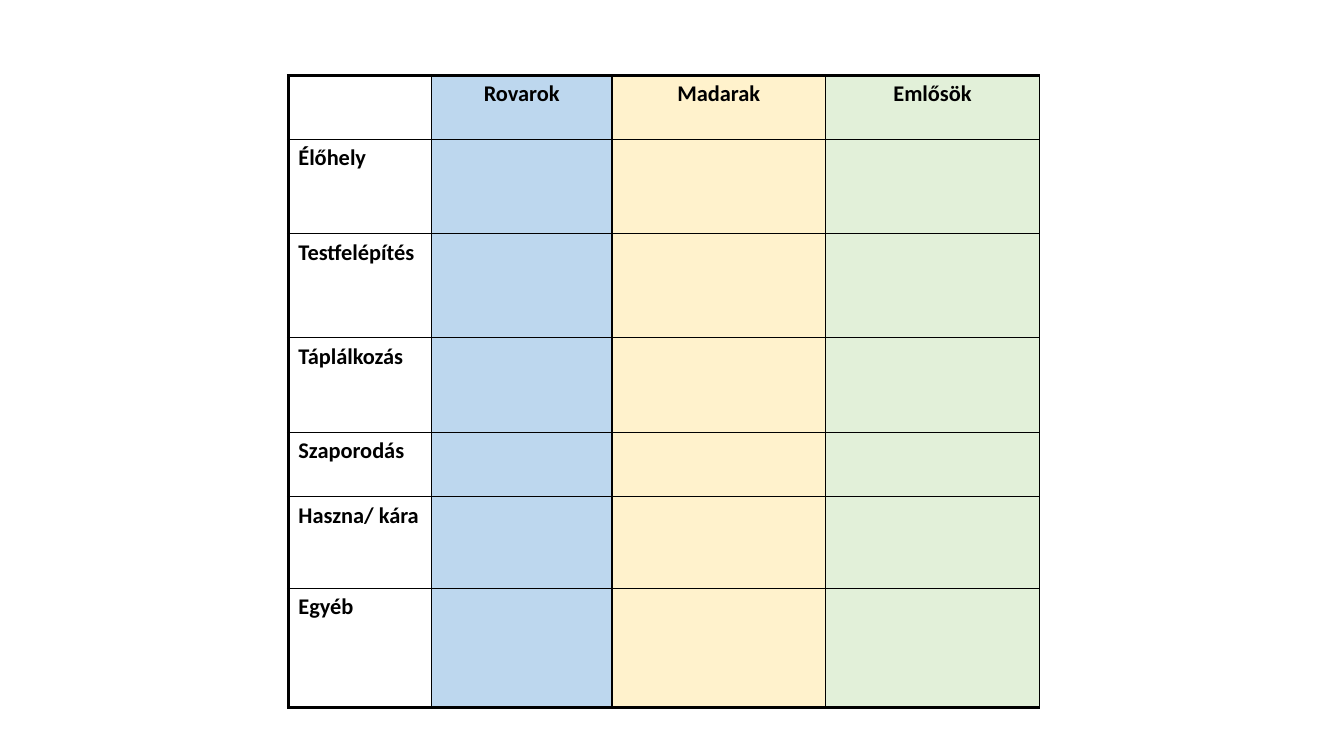
"""Build a slide with a table for comparing insects, birds and mammals."""
from dataclasses import dataclass

from lxml.etree import SubElement
from pptx import Presentation
from pptx.dml.color import RGBColor
from pptx.enum.text import PP_ALIGN
from pptx.oxml.ns import qn
from pptx.util import Inches, Pt


@dataclass(frozen=True)
class Theme:
    ink: str = "000000"
    fills: tuple = (None, "BDD7EE", "FFF2CC", "E2F0D9")
    font: str = "Calibri"
    size: float = 16
    thin: float = 1
    thick: float = 2.25


theme = Theme()


def write(cell, text, align=PP_ALIGN.LEFT, size=theme.size, bold=True):
    para = cell.text_frame.paragraphs[0]
    para.alignment = align
    run = para.add_run()
    run.text = text
    run.font.name = theme.font
    run.font.size = Pt(size)
    run.font.bold = bold
    run.font.color.rgb = RGBColor.from_string(theme.ink)


def border(cell, **widths):
    props = cell._tc.get_or_add_tcPr()
    for side, width in widths.items():
        line = SubElement(props, qn(f"a:ln{side}"), w=str(Pt(width)))
        solid = SubElement(line, qn("a:solidFill"))
        SubElement(solid, qn("a:srgbClr"), val=theme.ink)


heads = ["", "Rovarok", "Madarak", "Emlősök"]
labels = ["", "Élőhely", "Testfelépítés", "Táplálkozás", "Szaporodás",
          "Haszna/ kára", "Egyéb"]
widths = [1.42, 1.79, 2.12, 2.12]
heights = [0.63, 0.94, 1.03, 0.94, 0.64, 0.91, 1.18]

deck = Presentation()
deck.slide_width = Inches(13.33)
deck.slide_height = Inches(7.5)
slide = deck.slides.add_slide(deck.slide_layouts[6])

frame = slide.shapes.add_table(
    len(labels), len(heads), Inches(2.86), Inches(0.75),
    Inches(sum(widths)), Inches(sum(heights)))
table = frame.table
table.first_row = False
table.horz_banding = False

for col, width in zip(table.columns, widths):
    col.width = Inches(width)
for row, height in zip(table.rows, heights):
    row.height = Inches(height)

last = len(labels) - 1
for r, label in enumerate(labels):
    for c, head in enumerate(heads):
        cell = table.cell(r, c)
        border(cell,
               L=theme.thick if c == 0 else theme.thin,
               R=theme.thin,
               T=theme.thick if r == 0 else theme.thin,
               B=theme.thick if r == last else theme.thin)
        if theme.fills[c]:
            cell.fill.solid()
            cell.fill.fore_color.rgb = RGBColor.from_string(theme.fills[c])
        else:
            cell.fill.background()
        if r == 0 and head:
            write(cell, head, align=PP_ALIGN.CENTER)
        elif c == 0 and label:
            write(cell, label)

deck.save("out.pptx")
